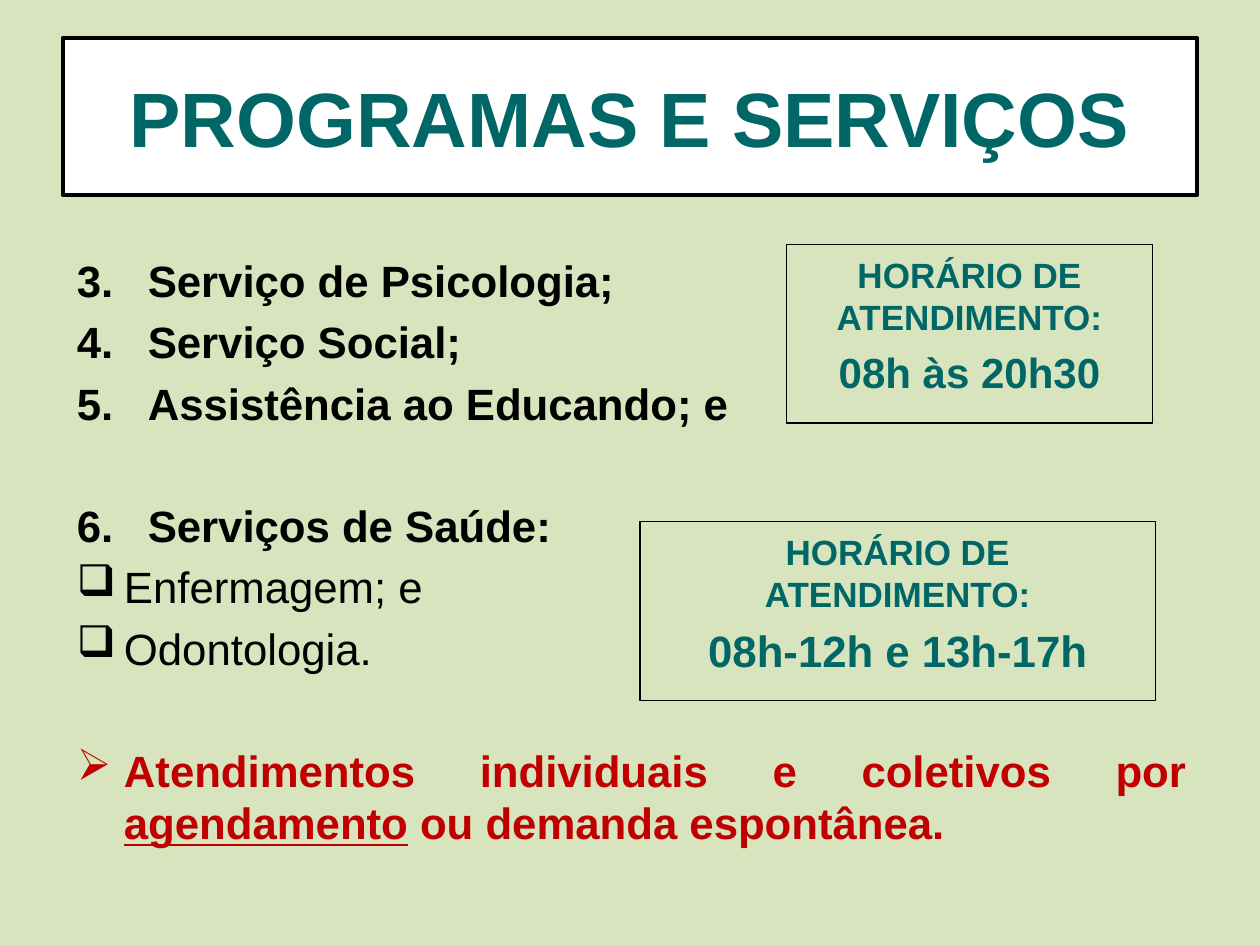
import pptx
import pptx.dml.color
import pptx.enum.shapes
import pptx.enum.text
import pptx.oxml
import pptx.util
from pptx.util import Cm

RGBColor = pptx.dml.color.RGBColor
GREEN = RGBColor(0xD7, 0xE4, 0xBD)
WHITE = RGBColor(0xFF, 0xFF, 0xFF)
BLACK = RGBColor(0x00, 0x00, 0x00)
TEAL = RGBColor(0x00, 0x66, 0x66)
RED = RGBColor(0xC0, 0x00, 0x00)

ALIGN = pptx.enum.text.PP_ALIGN
ANCHOR = pptx.enum.text.MSO_ANCHOR
RECTANGLE = pptx.enum.shapes.MSO_SHAPE.RECTANGLE
NAMESPACE = "http://schemas.openxmlformats.org/drawingml/2006/main"


def add_box(position, line_width, fill=None):
    shape = slide.shapes.add_shape(RECTANGLE, *[Cm(value) for value in position])
    shape.shadow.inherit = False
    if fill is None:
        shape.fill.background()
    else:
        shape.fill.solid()
        shape.fill.fore_color.rgb = fill
    shape.line.color.rgb = BLACK
    shape.line.width = pptx.util.Pt(line_width)
    shape.text_frame.word_wrap = True
    return shape


def add_run(paragraph, text, size, color, **formats):
    run = paragraph.add_run()
    run.text = text
    values = {"name": "Arial", "size": pptx.util.Pt(size), "bold": True, **formats}
    for name, value in values.items():
        setattr(run.font, name, value)
    run.font.color.rgb = color


presentation = pptx.Presentation()
presentation.slide_width = Cm(25.4)
presentation.slide_height = Cm(19.05)
slide = presentation.slides.add_slide(presentation.slide_layouts[6])
slide.background.fill.solid()
slide.background.fill.fore_color.rgb = GREEN

# Title
title = add_box((1.27, 0.76, 22.86, 3.18), 2.25, WHITE)
title.text_frame.vertical_anchor = ANCHOR.MIDDLE
paragraph = title.text_frame.paragraphs[0]
paragraph.alignment = ALIGN.CENTER
add_run(paragraph, "PROGRAMAS E SERVIÇOS", 44, TEAL)

# List of services: bullet, space before, color, runs
NUMBER = '<a:buAutoNum xmlns:a="%s" type="arabicPeriod" startAt="3"/>' % NAMESPACE
CHARACTER = '<a:buChar xmlns:a="%s" char="%s"/>'
services = [
    (None, 0, BLACK, [("Serviço de Psicologia;", {})]),
    (None, 5, BLACK, [("Serviço Social;", {})]),
    (None, 5, BLACK, [("Assistência ao Educando; e", {})]),
    (None, 40, BLACK, [("Serviços de Saúde:", {})]),
    ("❑", 5, BLACK, [("Enfermagem; e", {"bold": False})]),
    ("❑", 5, BLACK, [("Odontologia.", {"bold": False})]),
    ("➢", 40, RED, [
        ("Atendimentos individuais e coletivos por ", {}),
        ("agendamento", {"underline": True}),
        (" ou demanda espontânea.", {}),
    ]),
]
body = slide.shapes.add_textbox(Cm(1.3), Cm(4.32), Cm(22.86), Cm(13.69))
body.text_frame.word_wrap = True
body.text_frame.margin_top = Cm(0.8)
for index, (bullet, space, color, runs) in enumerate(services):
    frame = body.text_frame
    paragraph = frame.add_paragraph() if index else frame.paragraphs[0]
    paragraph.alignment = ALIGN.JUSTIFY
    paragraph.space_before = pptx.util.Pt(space)
    indent = Cm(0.95) if bullet else Cm(1.43)
    properties = paragraph._p.get_or_add_pPr()
    properties.set("marL", str(indent))
    properties.set("indent", str(-indent))
    bullet_xml = CHARACTER % (NAMESPACE, bullet) if bullet else NUMBER
    properties.append(pptx.oxml.parse_xml(bullet_xml))
    for text, formats in runs:
        add_run(paragraph, text, 25, color, **formats)

# Opening hours
opening_hours = [
    ((15.85, 4.93, 7.39, 3.6), "08h às 20h30", 24),
    ((12.9, 10.52, 10.39, 3.6), "08h-12h e 13h-17h", 25),
]
for position, hours, size in opening_hours:
    frame = add_box(position, 0.75).text_frame
    frame.vertical_anchor = ANCHOR.TOP
    frame.margin_top = Cm(0.18)
    heading = frame.paragraphs[0]
    add_run(heading, "HORÁRIO DE ATENDIMENTO:", 20, TEAL)
    schedule = frame.add_paragraph()
    schedule.space_before = pptx.util.Pt(5)
    add_run(schedule, hours, size, TEAL)
    for paragraph in (heading, schedule):
        paragraph.alignment = ALIGN.CENTER

presentation.save("out.pptx")
